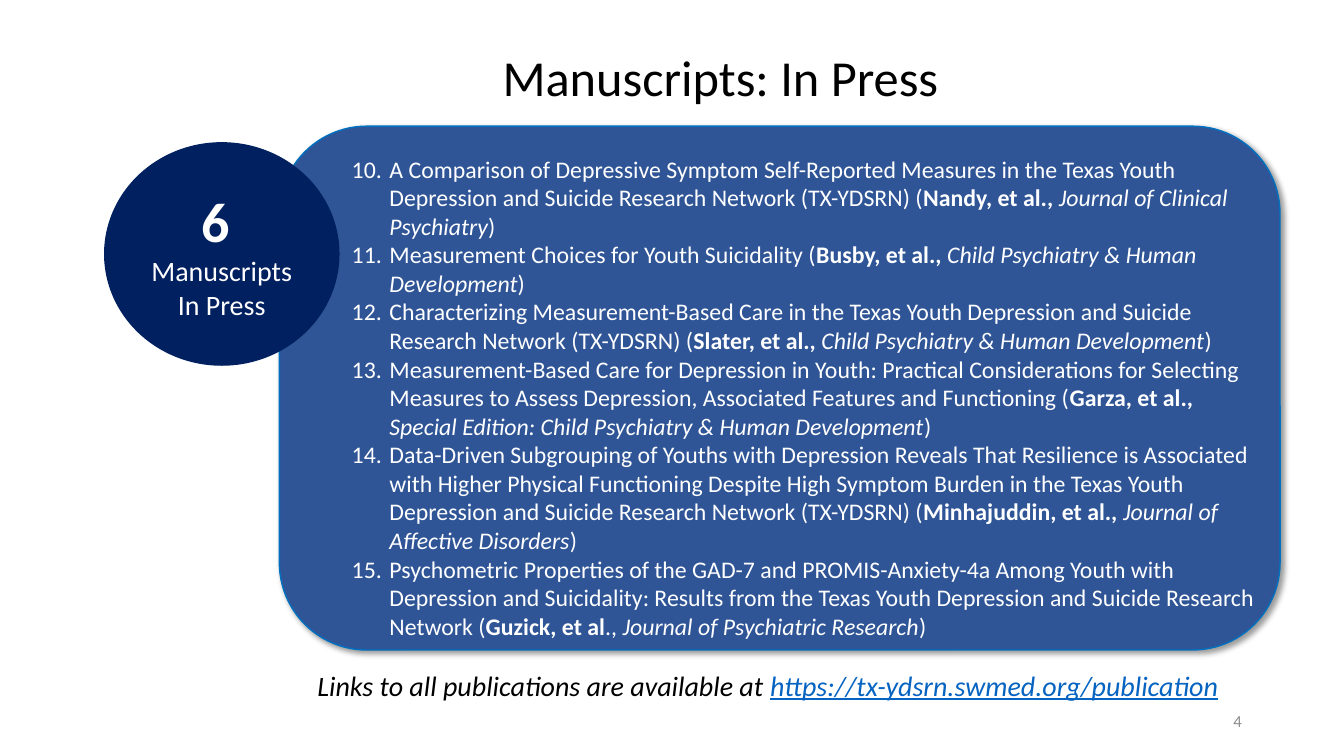
"""Build the slide that lists the manuscripts in press."""
from lxml.etree import SubElement
from pptx import Presentation
from pptx.dml.color import RGBColor
from pptx.enum.shapes import MSO_SHAPE
from pptx.enum.text import MSO_ANCHOR, MSO_AUTO_SIZE, PP_ALIGN
from pptx.oxml import parse_xml
from pptx.oxml.ns import nsdecls, qn
from pptx.util import Cm, Pt


def color(hex_value):
    return RGBColor.from_string(hex_value)


def write(para, text, size, ink, **formats):
    span = para.add_run()
    span.text = text
    span.font.color.rgb = color(ink)
    for name, value in {"name": "Calibri", "size": Pt(size), **formats}.items():
        setattr(span.font, name, value)


MANUSCRIPTS = [
    ("A Comparison of Depressive Symptom Self-Reported Measures in the Texas Youth "
     "Depression and Suicide Research Network (TX-YDSRN) (",
     "Nandy, et al., ", "", "Journal of Clinical Psychiatry"),
    ("Measurement Choices for Youth Suicidality (",
     "Busby, et al., ", "", "Child Psychiatry & Human Development"),
    ("Characterizing Measurement-Based Care in the Texas Youth Depression and Suicide "
     "Research Network (TX-YDSRN) (",
     "Slater, et al., ", "", "Child Psychiatry & Human Development"),
    ("Measurement-Based Care for Depression in Youth: Practical Considerations for "
     "Selecting Measures to Assess Depression, Associated Features and Functioning (",
     "Garza, et al., ", "", "Special Edition: Child Psychiatry & Human Development"),
    ("Data-Driven Subgrouping of Youths with Depression Reveals That Resilience is "
     "Associated with Higher Physical Functioning Despite High Symptom Burden in the "
     "Texas Youth Depression and Suicide Research Network (TX-YDSRN) (",
     "Minhajuddin, et al., ", "", "Journal of Affective Disorders"),
    ("Psychometric Properties of the GAD-7 and PROMIS-Anxiety-4a Among Youth with "
     "Depression and Suicidality: Results from the Texas Youth Depression and Suicide "
     "Research Network (",
     "Guzick, et al", "., ", "Journal of Psychiatric Research"),
]
FIRST_NUMBER = 10

deck = Presentation()
deck.slide_width, deck.slide_height = Cm(33.87), Cm(19.05)
page = deck.slides.add_slide(deck.slide_layouts[1])
shapes = page.shapes
title, body = page.placeholders

panel = shapes.add_shape(MSO_SHAPE.ROUNDED_RECTANGLE, Cm(7.04), Cm(3.18), Cm(25.22), Cm(13.2))
badge = shapes.add_shape(MSO_SHAPE.OVAL, Cm(2.64), Cm(3.6), Cm(5.9), Cm(5.6))
for shape, fill, line in [(panel, "2F5597", "0070C0"), (badge, "002060", "002060")]:
    shape.shadow.inherit = False
    shape.fill.solid()
    shape.fill.fore_color.rgb = color(fill)
    shape.line.color.rgb = color(line)
    shape.line.width = Pt(1)
panel.element.spPr.find(qn("a:effectLst")).append(parse_xml(
    f'<a:outerShdw {nsdecls("a")} blurRad="{Pt(4)}" dist="{Pt(3)}" dir="2700000" '
    'algn="tl" rotWithShape="0"><a:srgbClr val="000000"><a:alpha val="40000"/>'
    '</a:srgbClr></a:outerShdw>'))
body.element.getparent().append(body.element)

links = shapes.add_textbox(0, 0, 0, 0)
number = shapes.add_textbox(0, 0, 0, 0)
placements = [
    (title, 4.04, 1.22, 28.24, 2.34, MSO_ANCHOR.TOP),
    (body, 7.32, 3.76, 24.69, 12.6, MSO_ANCHOR.TOP),
    (links, 7.75, 16.71, 23.42, 1.12, MSO_ANCHOR.TOP),
    (number, 23.93, 17.65, 7.62, 1.02, MSO_ANCHOR.MIDDLE),
]
for box, left, top, width, height, anchor in placements:
    box.left, box.top, box.width, box.height = Cm(left), Cm(top), Cm(width), Cm(height)
    frame = box.text_frame
    frame.word_wrap = True
    frame.auto_size = MSO_AUTO_SIZE.NONE
    frame.vertical_anchor = anchor

heading = title.text_frame.paragraphs[0]
heading.alignment = PP_ALIGN.CENTER
heading.line_spacing = 0.9
write(heading, "Manuscripts: In Press", 36, "000000")

badge.text_frame.vertical_anchor = MSO_ANCHOR.MIDDLE
count = badge.text_frame.paragraphs[0]
label = badge.text_frame.add_paragraph()
for para, text, size, bold in [(count, "6 ", 40, True),
                               (label, "Manuscripts In Press", 20, False)]:
    para.alignment = PP_ALIGN.CENTER
    write(para, text, size, "FFFFFF", bold=bold)

for index, (topic, authors, joiner, journal) in enumerate(MANUSCRIPTS):
    frame = body.text_frame
    para = frame.add_paragraph() if index else frame.paragraphs[0]
    properties = para._p.get_or_add_pPr()
    properties.set("marL", str(Cm(2.24)))
    properties.set("indent", str(-Cm(0.95)))
    SubElement(properties, qn("a:buFont"), typeface="Calibri")
    SubElement(properties, qn("a:buAutoNum"), type="arabicPeriod", startAt=str(FIRST_NUMBER))
    para.space_before = Pt(0)
    for text, formats in [(topic, {}), (authors, {"bold": True}), (joiner, {}),
                          (journal, {"italic": True}), (")", {})]:
        if text:
            write(para, text, 17, "FFFFFF", **formats)

sentence = links.text_frame.paragraphs[0]
write(sentence, "Links to all publications are available at ", 20, "000000", italic=True)
write(sentence, "https://tx-ydsrn.swmed.org/publication", 20, "0563C1", italic=True, underline=True)

page_number = number.text_frame.paragraphs[0]
page_number.alignment = PP_ALIGN.RIGHT
write(page_number, "4", 12, "8C8C8C")

deck.save("out.pptx")
